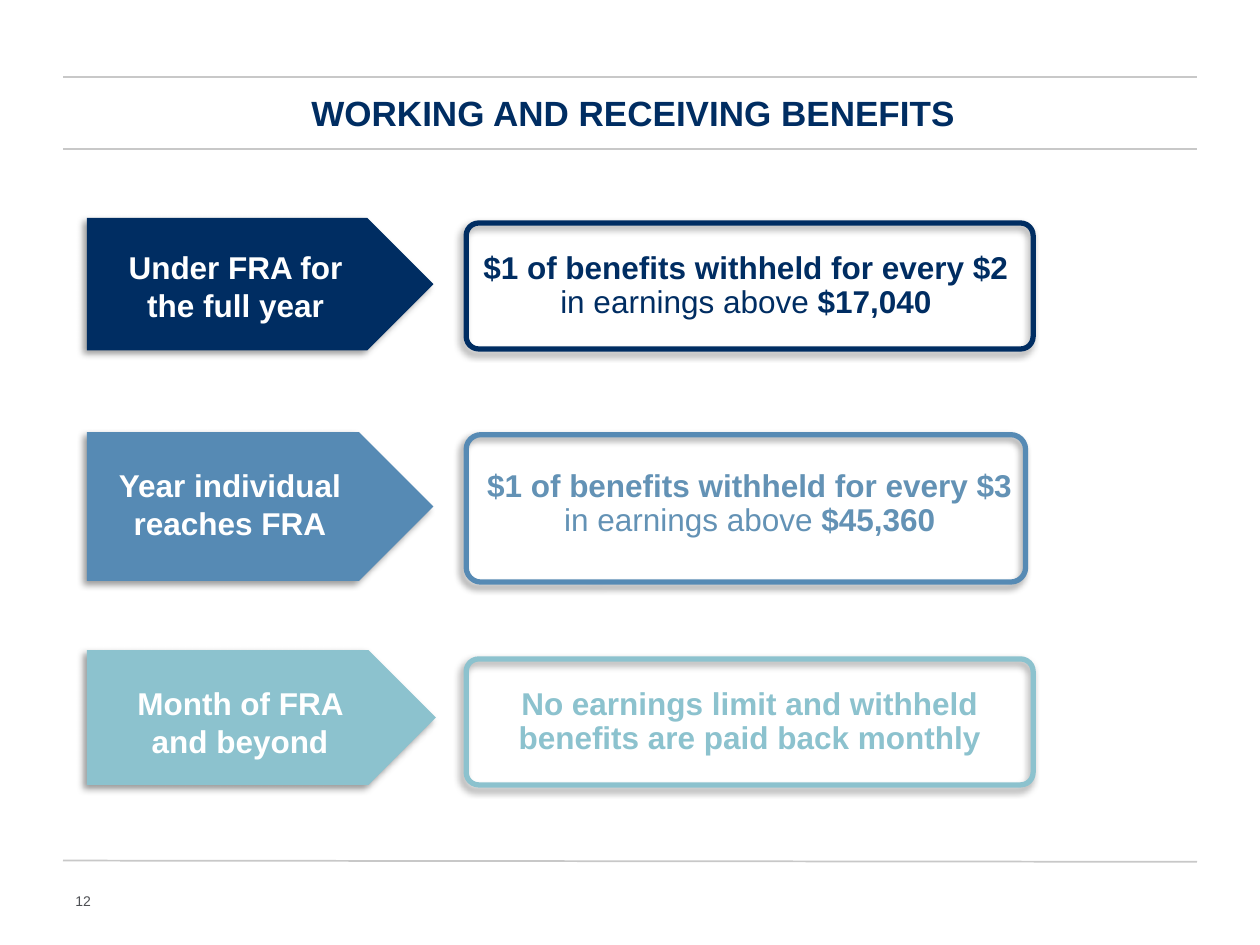
from collections import namedtuple
from dataclasses import dataclass

from lxml import etree
from pptx import Presentation
from pptx import util as u
from pptx.dml.color import RGBColor
from pptx.enum import shapes, text
from pptx.oxml import ns

# The slide is a grid of 100 columns by 75 rows
COLUMNS, ROWS = 100, 75
WIDTH, HEIGHT = u.Inches(10), u.Inches(7.5)


@dataclass(frozen=True)
class Theme:
    font: str = "Arial"
    navy: str = "002D62"
    blue: str = "568AB4"
    blue_text: str = "6392B5"
    aqua: str = "8CC2CE"
    white: str = "FFFFFF"
    rule: str = "C8C8C8"
    page: str = "4D4F53"
    title_size: int = 20
    body_size: int = 18
    page_size: int = 8


THEME = Theme()


class Box(namedtuple("Box", "x y w h")):
    """A place on the grid, in columns and rows."""

    def inner(self, x, y, w, h):
        return Box(self.x + x, self.y + y, w, h)

    def emu(self):
        return (int(self.x * WIDTH / COLUMNS), int(self.y * HEIGHT / ROWS),
                int(self.w * WIDTH / COLUMNS), int(self.h * HEIGHT / ROWS))


Case = namedtuple("Case", "top color ink label message arrow label_box panel panel_text")


def rgb(value):
    return RGBColor.from_string(value)


def add_effects(shape, shadow=False):
    effects = etree.SubElement(shape._element.spPr, ns.qn("a:effectLst"))
    if shadow:
        outer = etree.SubElement(effects, ns.qn("a:outerShdw"),
                                 blurRad=str(u.Pt(4)), dist=str(u.Pt(3)),
                                 dir=str(135 * 60000), algn="tr", rotWithShape="0")
        black = etree.SubElement(outer, ns.qn("a:srgbClr"), val="000000")
        etree.SubElement(black, ns.qn("a:alpha"), val="40000")


def add_text(parent, box, runs, size, color, align=text.PP_ALIGN.CENTER,
             anchor=text.MSO_ANCHOR.MIDDLE, inset=None, spacing=None):
    """Runs are pairs of wording and boldness."""
    frame = parent.add_textbox(*box.emu()).text_frame
    frame.word_wrap = True
    frame.vertical_anchor = anchor
    if inset is not None:
        frame.margin_left = frame.margin_right = inset
        frame.margin_top = frame.margin_bottom = inset
    paragraph = frame.paragraphs[0]
    paragraph.alignment = align
    if spacing:
        paragraph.line_spacing = spacing
    for wording, bold in runs:
        run = paragraph.add_run()
        run.text = wording
        run.font.name = THEME.font
        run.font.size = u.Pt(size)
        run.font.bold = bold
        run.font.color.rgb = rgb(color)
    return frame


def add_rule(slide, box):
    x, y, w, h = box.emu()
    rule = slide.shapes.add_connector(shapes.MSO_CONNECTOR.STRAIGHT, x, y, x + w, y + h)
    rule.line.color.rgb = rgb(THEME.rule)
    rule.line.width = u.Pt(1)
    add_effects(rule)


def add_header(slide, box):
    add_rule(slide, box.inner(0, 0, 90, 0))
    add_rule(slide, box.inner(0, box.h, 90, 0))
    add_text(slide.shapes, box, [("WORKING AND RECEIVING BENEFITS", True)],
             THEME.title_size, THEME.navy)


def add_footer(slide, box):
    add_rule(slide, box.inner(0, 0, box.w, 0.1))
    add_text(slide.shapes, box.inner(0, 1.2, 23.3, 4), [("12", False)],
             THEME.page_size, THEME.page, align=text.PP_ALIGN.LEFT)


def add_case(slide, box, case):
    # Arrow that names the period
    arrow = slide.shapes.add_shape(shapes.MSO_SHAPE.PENTAGON, *box.inner(0, 0, *case.arrow).emu())
    arrow.fill.solid()
    arrow.fill.fore_color.rgb = rgb(case.color)
    arrow.line.fill.background()
    add_effects(arrow, shadow=True)

    # Outlined panel with the earnings rule
    group = slide.shapes.add_group_shape().shapes
    panel = group.add_shape(shapes.MSO_SHAPE.ROUNDED_RECTANGLE, *box.inner(*case.panel).emu())
    panel.adjustments[0] = 0.1
    panel.fill.background()
    panel.line.color.rgb = rgb(case.color)
    panel.line.width = u.Pt(3)
    add_effects(panel, shadow=True)
    add_text(group, box.inner(*case.panel_text), case.message, THEME.body_size,
             case.ink, inset=u.Inches(0.12), spacing=0.9)

    # Arrow label
    label = add_text(slide.shapes, box.inner(*case.label_box), [(case.label, True)],
                     THEME.body_size, THEME.white, anchor=text.MSO_ANCHOR.TOP)
    label.auto_size = text.MSO_AUTO_SIZE.SHAPE_TO_FIT_TEXT


# Boxes are relative to the left edge and top of each case
CASES = [
    Case(17.3, THEME.navy, THEME.navy, "Under FRA for the full year",
         [("$1 of benefits withheld for every $2 ", True),
          ("in earnings above ", False), ("$17,040", True)],
         (27.5, 10.5), (0.5, 1.9, 22.6, 7.1),
         (30.1, 0.4, 45, 10), (30.1, 0.7, 44.4, 9.4)),
    Case(34.3, THEME.blue, THEME.blue_text, "Year individual reaches FRA",
         [("$1 of benefits withheld for every $3", True),
          (" in earnings above ", False), ("$45,360", True)],
         (27.5, 11.8), (0.5, 2.2, 21.7, 7.1),
         (30.1, 0.2, 44.4, 11.7), (30.1, 0.7, 45, 10)),
    Case(51.6, THEME.aqua, THEME.aqua, "Month of FRA and beyond",
         [("No earnings limit and withheld benefits are paid back monthly", True)],
         (27.7, 10.7), (1.1, 2.2, 22.1, 7.1),
         (30.1, 0.7, 45, 10), (30.7, 1, 43.8, 9.4)),
]


def main():
    deck = Presentation()
    deck.slide_width, deck.slide_height = WIDTH, HEIGHT
    slide = deck.slides.add_slide(deck.slide_layouts[6])
    add_header(slide, Box(5, 6.1, 90.5, 5.7))
    for case in CASES:
        add_case(slide, Box(6.9, case.top, 75.1, case.arrow[1]), case)
    add_footer(slide, Box(5, 68.3, 90, 5.2))
    deck.save("out.pptx")


if __name__ == "__main__":
    main()
